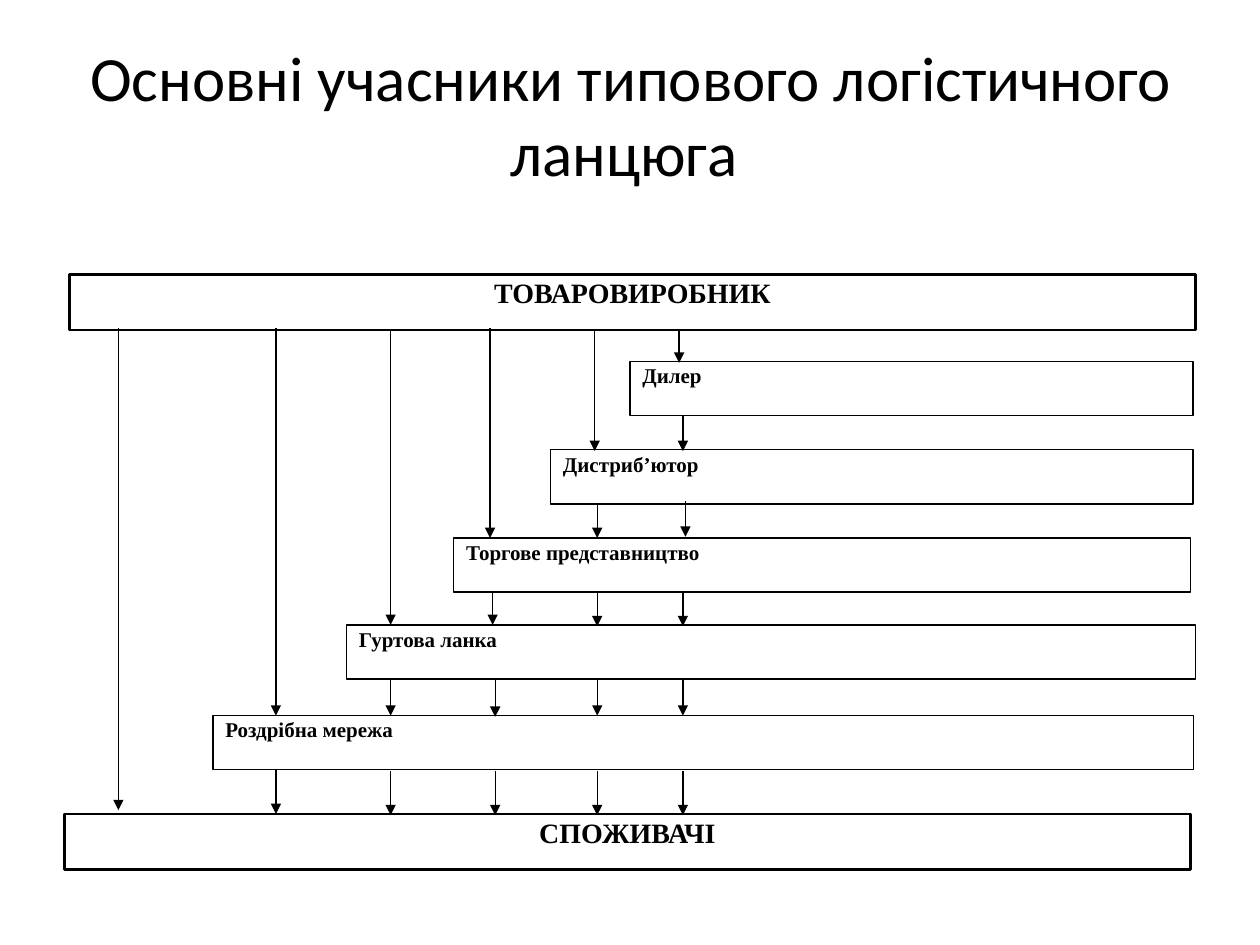
from typing import NamedTuple

from lxml import etree
from pptx import Presentation
from pptx import util as u
from pptx.dml.color import RGBColor
from pptx.enum import shapes, text
from pptx.oxml.ns import qn

BLACK, WHITE = "000000", "FFFFFF"
RIGHT_INSET, EDGE_INSET = 0.1, 0.01


class Box(NamedTuple):
    label: str
    left: float
    top: float
    width: float
    is_end: bool = False  # first and last link of the chain


class ArrowRow(NamedTuple):
    top: float
    bottom: float
    columns: tuple[float, ...]


BOXES = [
    Box("ТОВАРОВИРОБНИК", 0.55, 2.18, 8.94, True),
    Box("Дилер", 5, 2.87, 4.47),
    Box("Дистриб’ютор", 4.37, 3.57, 5.1),
    Box("Торгове представництво", 3.6, 4.27, 5.85),
    Box("Гуртова ланка", 2.75, 4.96, 6.74),
    Box("Роздрібна мережа", 1.69, 5.68, 7.78),
    Box("СПОЖИВАЧІ", 0.51, 6.46, 8.94, True),
]

ARROW_ROWS = [
    # Direct deliveries from the producer to each link
    ArrowRow(2.6, 6.43, (0.94,)),
    ArrowRow(2.6, 5.68, (2.19,)),
    ArrowRow(2.62, 4.96, (3.1,)),
    ArrowRow(2.6, 4.27, (3.89,)),
    ArrowRow(2.62, 3.58, (4.72,)),
    ArrowRow(2.62, 2.88, (5.39,)),
    # Deliveries from each link to the next one
    ArrowRow(3.3, 3.58, (5.42,)),
    ArrowRow(3.99, 4.27, (4.74,)),
    ArrowRow(3.98, 4.26, (5.44,)),
    ArrowRow(4.7, 4.96, (3.91,)),
    ArrowRow(4.71, 4.97, (4.74, 5.42)),
    ArrowRow(5.38, 5.68, (3.1, 4.74, 5.42)),
    ArrowRow(5.4, 5.69, (3.93,)),
    ArrowRow(6.1, 6.46, (2.19,)),
    ArrowRow(6.12, 6.47, (3.1, 3.93, 4.74, 5.42)),
]


def color(value: str) -> RGBColor:
    return RGBColor.from_string(value)


def add_run(paragraph, content: str, font: str, size: float, bold: bool) -> None:
    run = paragraph.add_run()
    run.text = content
    run.font.name = font
    run.font.size = u.Pt(size)
    run.font.bold = bold
    run.font.color.rgb = color(BLACK)


def add_title(slide, content: str) -> None:
    title = slide.shapes.title
    title.left, title.top = u.Inches(0.51), u.Inches(0.28)
    title.width, title.height = u.Inches(9), u.Inches(1.25)
    title.text_frame.vertical_anchor = text.MSO_ANCHOR.MIDDLE
    paragraph = title.text_frame.paragraphs[0]
    paragraph.alignment = text.PP_ALIGN.CENTER
    add_run(paragraph, content, "Calibri", 36, False)


def add_box(slide, box: Box) -> None:
    height = 0.44 if box.is_end else 0.43
    shape = slide.shapes.add_shape(
        shapes.MSO_SHAPE.RECTANGLE, u.Inches(box.left), u.Inches(box.top),
        u.Inches(box.width), u.Inches(height))
    shape.shadow.inherit = False
    shape.fill.solid()
    shape.fill.fore_color.rgb = color(WHITE)
    shape.line.color.rgb = color(BLACK)
    shape.line.width = u.Pt(1.5 if box.is_end else 0.75)

    frame = shape.text_frame
    frame.word_wrap = True
    frame.vertical_anchor = text.MSO_ANCHOR.TOP
    frame.margin_left = frame.margin_right = u.Inches(RIGHT_INSET)
    frame.margin_top = frame.margin_bottom = u.Inches(EDGE_INSET)
    paragraph = frame.paragraphs[0]
    paragraph.alignment = (
        text.PP_ALIGN.CENTER if box.is_end else text.PP_ALIGN.LEFT)
    add_run(paragraph, box.label, "Times New Roman", 16 if box.is_end else 12, True)


def add_arrow(slide, x: float, top: float, bottom: float) -> None:
    arrow = slide.shapes.add_connector(
        shapes.MSO_CONNECTOR.STRAIGHT,
        u.Inches(x), u.Inches(top), u.Inches(x), u.Inches(bottom))
    arrow.line.color.rgb = color(BLACK)
    arrow.line.width = u.Pt(0.75)
    # Arrowhead at the lower end, no shadow
    properties = arrow.element.spPr
    line = properties.find(qn("a:ln"))
    etree.SubElement(line, qn("a:tailEnd"), type="triangle")
    etree.SubElement(properties, qn("a:effectLst"))


def main() -> None:
    presentation = Presentation()
    presentation.slide_width = u.Inches(10)
    presentation.slide_height = u.Inches(7.5)
    slide = presentation.slides.add_slide(presentation.slide_layouts[5])

    add_title(slide, "Основні учасники типового логістичного ланцюга ")
    for box in BOXES:
        add_box(slide, box)
    for row in ARROW_ROWS:
        for x in row.columns:
            add_arrow(slide, x, row.top, row.bottom)

    presentation.save("out.pptx")


if __name__ == "__main__":
    main()
